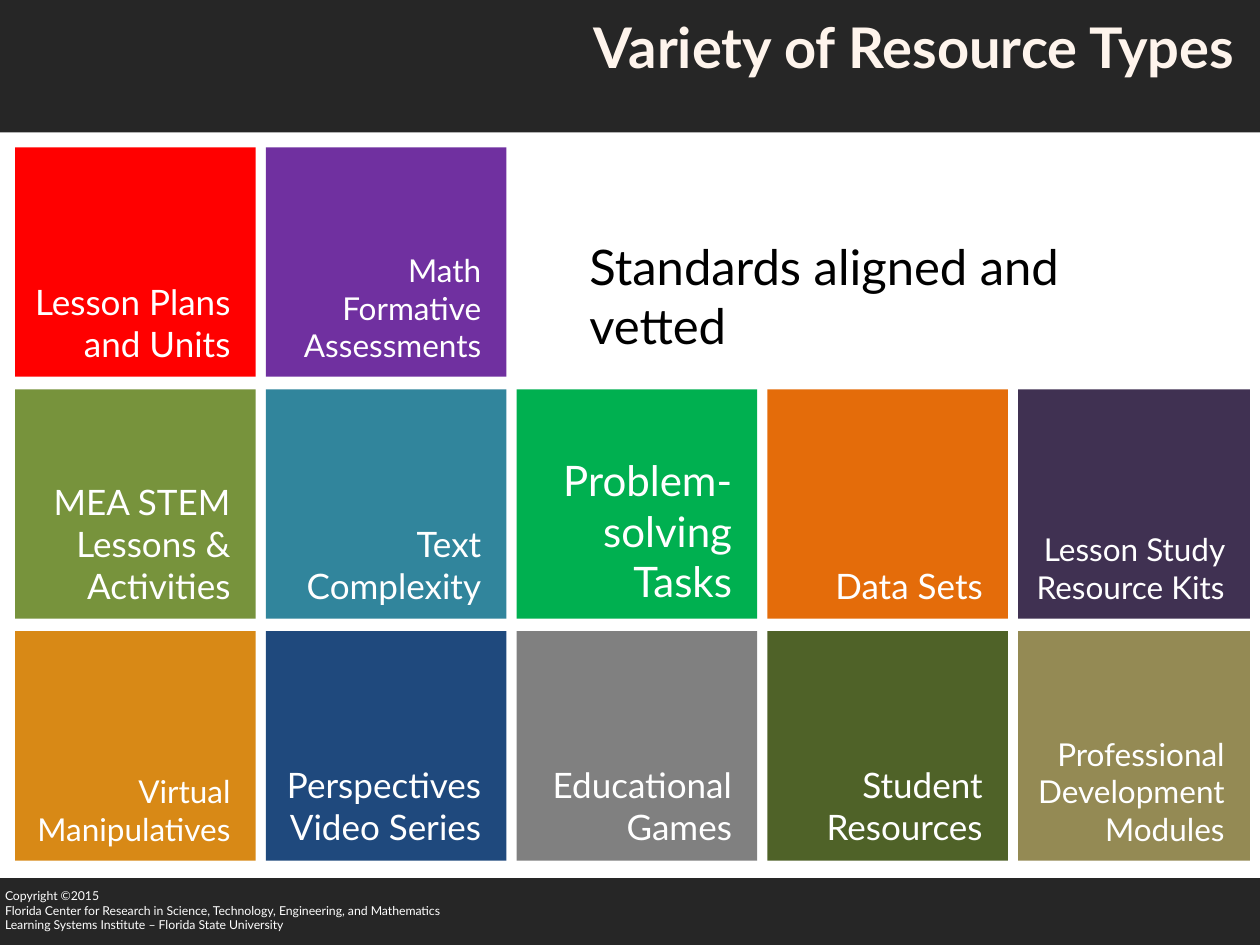
"""Build a slide that shows resource types as a grid of coloured tiles."""
from pptx import Presentation
from pptx.dml.color import RGBColor
from pptx.enum.shapes import MSO_SHAPE
from pptx.enum.text import MSO_ANCHOR, PP_ALIGN
from pptx.util import Inches, Pt

FONT = "Lato"
WHITE = RGBColor(0xFF, 0xFF, 0xFF)
BLACK = RGBColor(0x00, 0x00, 0x00)
CREAM = RGBColor(0xFE, 0xF4, 0xEC)
CHARCOAL = RGBColor(0x26, 0x26, 0x26)
RED = RGBColor(0xFF, 0x00, 0x00)
PURPLE = RGBColor(0x70, 0x30, 0xA0)
OLIVE = RGBColor(0x77, 0x93, 0x3C)
TEAL = RGBColor(0x31, 0x85, 0x9C)
GREEN = RGBColor(0x00, 0xB0, 0x50)
ORANGE = RGBColor(0xE4, 0x6C, 0x0A)
PLUM = RGBColor(0x40, 0x31, 0x52)
AMBER = RGBColor(0xD8, 0x89, 0x16)
NAVY = RGBColor(0x1F, 0x49, 0x7D)
GREY = RGBColor(0x80, 0x80, 0x80)
FOREST = RGBColor(0x4F, 0x62, 0x28)
KHAKI = RGBColor(0x94, 0x8A, 0x54)

TITLE = "Variety of Resource Types"
CLAIM = "Standards aligned and vetted"
FOOTER = [
    "Copyright ©2015",
    "Florida Center for Research in Science, Technology, Engineering, and Mathematics",
    "Learning Systems Institute – Florida State University",
]
TILE_ROWS = [
    [("Lesson Plans and Units", RED, 20),
     ("Math Formative Assessments", PURPLE, 18)],
    [("MEA STEM Lessons & Activities", OLIVE, 20),
     ("Text Complexity", TEAL, 20),
     ("Problem-solving Tasks", GREEN, 24),
     ("Data Sets", ORANGE, 20),
     ("Lesson Study Resource Kits", PLUM, 18)],
    [("Virtual Manipulatives", AMBER, 18),
     ("Perspectives Video Series", NAVY, 20),
     ("Educational Games", GREY, 20),
     ("Student Resources", FOREST, 20),
     ("Professional Development Modules", KHAKI, 18)],
]

SLIDE_WIDTH, SLIDE_HEIGHT = 10, 7.5
HEADER_HEIGHT, FOOTER_HEIGHT = 1.05, 0.53
GRID_LEFT, GRID_TOP = 0.12, 1.17
COLUMN_PITCH, ROW_PITCH = 1.99, 1.92
TILE_WIDTH, TILE_HEIGHT = 1.91, 1.82
GRID_RIGHT = 9.92
TILE_INSETS = (0.1, 0.05, 0.2, 0.1)


def write(box, lines, size, color, align, anchor, insets, bold=False):
    """Fill a box with formatted paragraphs."""
    frame = box.text_frame
    frame.word_wrap = True
    frame.vertical_anchor = anchor
    (frame.margin_left, frame.margin_top,
     frame.margin_right, frame.margin_bottom) = map(Inches, insets)
    frame.text = "\n".join(lines)
    for paragraph in frame.paragraphs:
        paragraph.alignment = align
        for span in paragraph.runs:
            span.font.name = FONT
            span.font.size = Pt(size)
            span.font.bold = bold
            span.font.color.rgb = color


def add_block(page, left, top, width, height, fill):
    """Add a plain filled rectangle."""
    block = page.shapes.add_shape(
        MSO_SHAPE.RECTANGLE, *map(Inches, (left, top, width, height)))
    block.shadow.inherit = False
    block.fill.solid()
    block.fill.fore_color.rgb = fill
    block.line.fill.background()
    return block


def main():
    """Build and save the deck."""
    deck = Presentation()
    deck.slide_width, deck.slide_height = Inches(SLIDE_WIDTH), Inches(SLIDE_HEIGHT)
    page = deck.slides.add_slide(deck.slide_layouts[6])

    footer = add_block(page, 0, SLIDE_HEIGHT - FOOTER_HEIGHT,
                       SLIDE_WIDTH, FOOTER_HEIGHT, CHARCOAL)
    write(footer, FOOTER, 7, WHITE, PP_ALIGN.LEFT, MSO_ANCHOR.BOTTOM,
          (0.04, 0.05, 0.1, 0.1))
    header = add_block(page, 0, 0, SLIDE_WIDTH, HEADER_HEIGHT, CHARCOAL)
    write(header, [TITLE], 32, CREAM, PP_ALIGN.RIGHT, MSO_ANCHOR.TOP,
          (0.1, 0.1, 0.2, 0.05), bold=True)

    for row, tiles in enumerate(TILE_ROWS):
        for column, (label, fill, size) in enumerate(tiles):
            left = GRID_LEFT + column * COLUMN_PITCH
            width = min(TILE_WIDTH, GRID_RIGHT - left)
            tile = add_block(page, left, GRID_TOP + row * ROW_PITCH,
                             width, TILE_HEIGHT, fill)
            write(tile, [label], size, WHITE, PP_ALIGN.RIGHT,
                  MSO_ANCHOR.BOTTOM, TILE_INSETS)

    claim = page.shapes.add_textbox(*map(Inches, (4.58, 1.83, 5, 0.57)))
    write(claim, [CLAIM], 28, BLACK, PP_ALIGN.LEFT, MSO_ANCHOR.TOP,
          (0.1, 0.05, 0.1, 0.05))
    deck.save("out.pptx")


if __name__ == "__main__":
    main()
